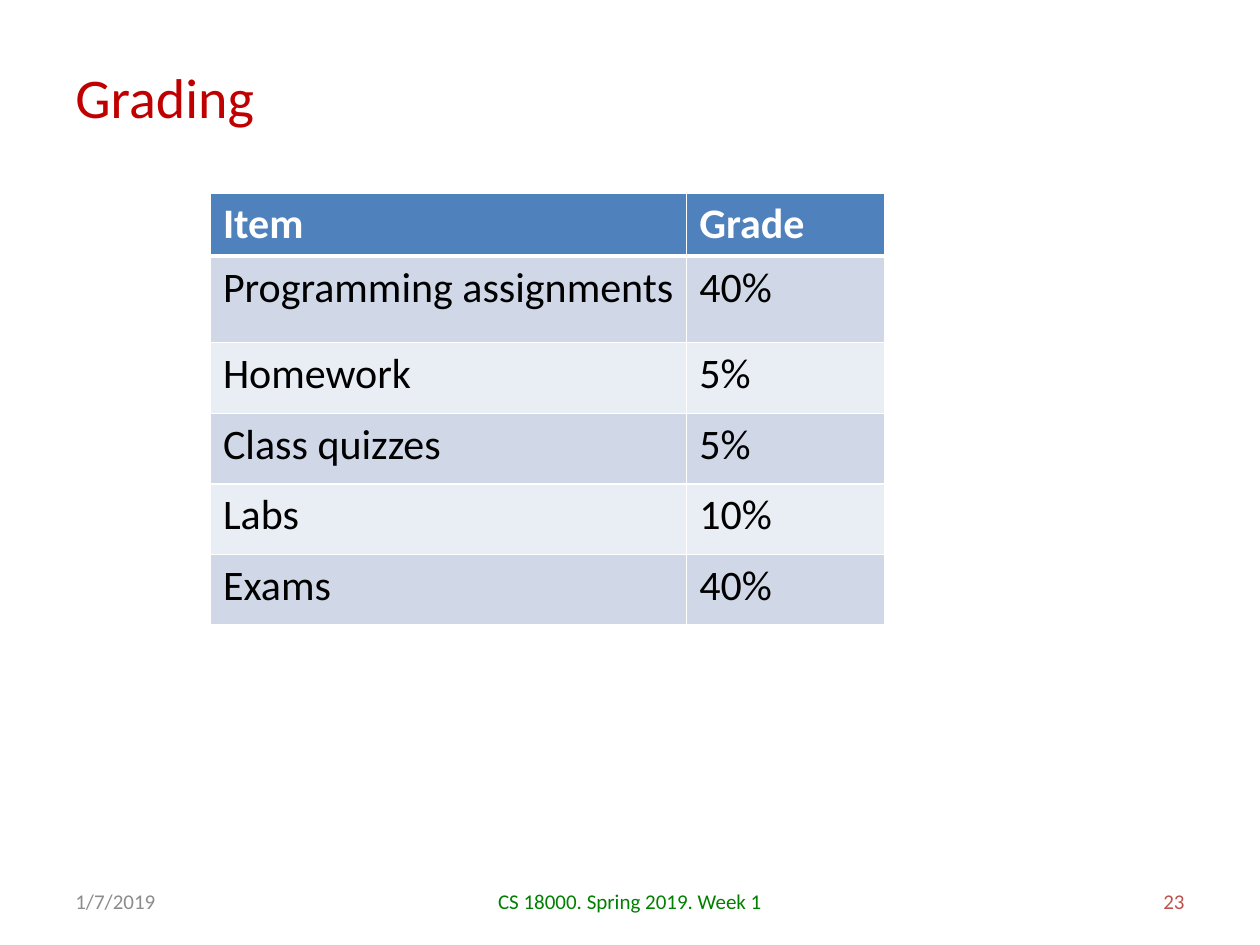
"""Build the course grading slide with its table of weights."""
import dataclasses

import pptx
import pptx.dml.color
import pptx.enum.text
import pptx.oxml
import pptx.oxml.ns
import pptx.presentation
import pptx.slide
import pptx.table
import pptx.util

RGBColor = pptx.dml.color.RGBColor
Align = pptx.enum.text.PP_ALIGN

WHITE = RGBColor(0xFF, 0xFF, 0xFF)
BLACK = RGBColor(0x00, 0x00, 0x00)
CRIMSON = RGBColor(0xC0, 0x00, 0x00)
BRICK = RGBColor(0xC0, 0x50, 0x4D)
GREEN = RGBColor(0x00, 0x80, 0x00)
GRAY = RGBColor(0x8C, 0x8C, 0x8C)
HEADER_BLUE = RGBColor(0x4F, 0x81, 0xBD)
BANDS = (RGBColor(0xE9, 0xED, 0xF4), RGBColor(0xD0, 0xD8, 0xE8))

WIDTH = pptx.util.Inches(10)
HEIGHT = pptx.util.Inches(7.5)
MARGIN = 0.05
FOOTER_TOP, FOOTER_HEIGHT = 6.95 / 7.5, 0.4 / 7.5
SIDE_WIDTH, CENTER_WIDTH = 0.233, 0.317


@dataclasses.dataclass(frozen=True)
class Label:
    """A line of text in a box given as shares of the slide."""
    text: str
    left: float
    top: float
    width: float
    height: float
    size: int
    color: RGBColor
    align: Align = Align.LEFT


@dataclasses.dataclass(frozen=True)
class GradeRow:
    """A table row with its height as a share of the slide."""
    item: str
    grade: str
    height: float = 0.56 / 7.5


def footer(text: str, left: float, width: float, color: RGBColor, align: Align) -> Label:
    """Describe one part of the footer."""
    return Label(text, left, FOOTER_TOP, width, FOOTER_HEIGHT, 12, color, align)


LABELS = (
    Label("Grading", MARGIN, 0.14 / 7.5, 1 - 2 * MARGIN, 1.25 / 7.5, 32, CRIMSON),
    footer("23", 1 - MARGIN - SIDE_WIDTH, SIDE_WIDTH, BRICK, Align.RIGHT),
    footer("CS 18000. Spring 2019. Week 1", (1 - CENTER_WIDTH) / 2, CENTER_WIDTH, GREEN, Align.CENTER),
    footer("1/7/2019", MARGIN, SIDE_WIDTH, GRAY, Align.LEFT),
)
COLUMN_SHARES = (0.378, 0.157)
GRADES = (
    GradeRow("Item", "Grade", 0.46 / 7.5),
    GradeRow("Programming assignments", "40%", 0.69 / 7.5),
    GradeRow("Homework", "5%"),
    GradeRow("Class quizzes", "5%"),
    GradeRow("Labs", "10%"),
    GradeRow("Exams", "40%"),
)


def across(share: float) -> int:
    """Turn a share of the slide's width into a length."""
    return round(WIDTH * share)


def down(share: float) -> int:
    """Turn a share of the slide's height into a length."""
    return round(HEIGHT * share)


def set_format(target: object, values: dict) -> None:
    """Set each named attribute of the target."""
    for name, value in values.items():
        setattr(target, name, value)


def write(frame: pptx.text.text.TextFrame, text: str, size: int, color: RGBColor,
          align: Align = Align.LEFT, bold: bool = False) -> None:
    """Fill a text frame with one formatted paragraph."""
    paragraph = frame.paragraphs[0]
    paragraph.alignment = align
    run = paragraph.add_run()
    run.text = text
    set_format(run.font, {"name": "Calibri", "size": pptx.util.Pt(size), "bold": bold})
    run.font.color.rgb = color


def draw_label(slide: pptx.slide.Slide, label: Label) -> None:
    """Draw a label, centred vertically in its box."""
    box = slide.shapes.add_textbox(across(label.left), down(label.top),
                                   across(label.width), down(label.height))
    set_format(box.text_frame, {"word_wrap": True,
                                "vertical_anchor": pptx.enum.text.MSO_ANCHOR.MIDDLE})
    write(box.text_frame, label.text, label.size, label.color, label.align)


def draw_borders(cell: pptx.table._Cell, widths: dict[str, int]) -> None:
    """Give a cell white borders of the given widths in points."""
    properties = cell._tc.get_or_add_tcPr()
    for position, (side, width) in enumerate(widths.items()):
        properties.insert(position, pptx.oxml.parse_xml(
            f'<a:ln{side} {pptx.oxml.ns.nsdecls("a")} w="{pptx.util.Pt(width)}">'
            f'<a:solidFill><a:srgbClr val="{WHITE}"/></a:solidFill></a:ln{side}>'))


def draw_grades(slide: pptx.slide.Slide, left: float, top: float) -> None:
    """Draw the table of grades with a header and banded rows."""
    grades = slide.shapes.add_table(
        len(GRADES), len(COLUMN_SHARES), across(left), down(top),
        across(sum(COLUMN_SHARES)), down(sum(row.height for row in GRADES))).table
    for column, share in zip(grades.columns, COLUMN_SHARES):
        column.width = across(share)
    for index, row in enumerate(GRADES):
        header = index == 0
        grades.rows[index].height = down(row.height)
        for cell, text in zip(grades.rows[index].cells, (row.item, row.grade)):
            write(cell.text_frame, text, 24, WHITE if header else BLACK, bold=header)
            cell.fill.solid()
            cell.fill.fore_color.rgb = HEADER_BLUE if header else BANDS[index % 2]
            draw_borders(cell, {"L": 1, "R": 1, "T": 3 if index == 1 else 1,
                                "B": 3 if header else 1})


def main() -> None:
    """Build and save the slide."""
    deck = pptx.Presentation()
    set_format(deck, {"slide_width": WIDTH, "slide_height": HEIGHT})
    slide = deck.slides.add_slide(deck.slide_layouts[6])
    for label in LABELS:
        draw_label(slide, label)
    draw_grades(slide, 0.167, 1.53 / 7.5)
    deck.save("out.pptx")


if __name__ == "__main__":
    main()
